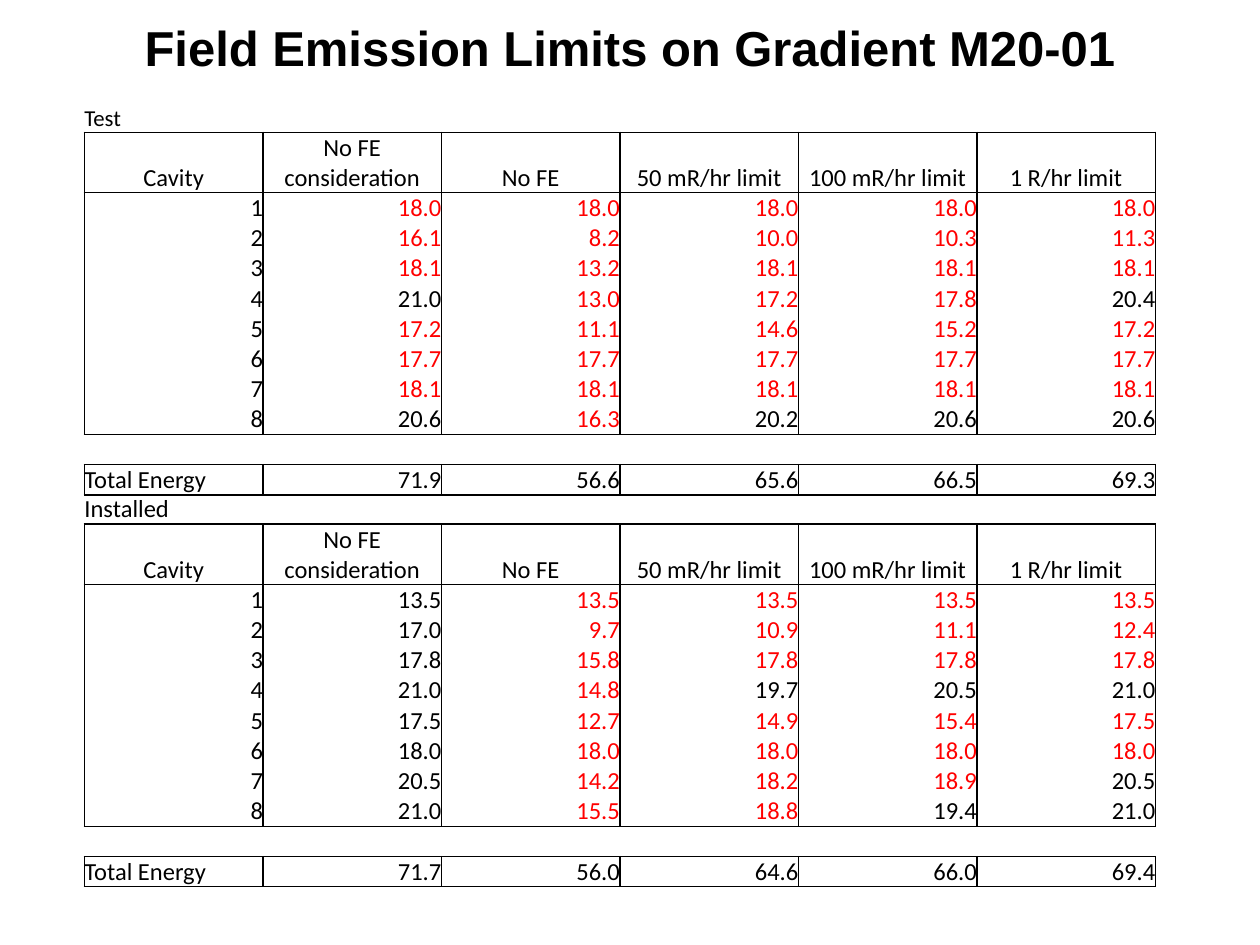
import pptx
import pptx.dml.color
import pptx.enum.text
import pptx.oxml
import pptx.oxml.ns
import pptx.util

# Content: a trailing * marks a limited gradient, shown in red
TITLE = "Field Emission Limits on Gradient M20-01"
HEADINGS = ["Cavity", "No FE consideration", "No FE",
            "50 mR/hr limit", "100 mR/hr limit", "1 R/hr limit"]
TABLES = [
    {
        "label": "Test", "label_size": 13, "top": 0.83, "label_height": 0.22,
        "closing_row": True,
        "cavities": [
            "1 18.0* 18.0* 18.0* 18.0* 18.0*",
            "2 16.1* 8.2* 10.0* 10.3* 11.3*",
            "3 18.1* 13.2* 18.1* 18.1* 18.1*",
            "4 21.0 13.0* 17.2* 17.8* 20.4",
            "5 17.2* 11.1* 14.6* 15.2* 17.2*",
            "6 17.7* 17.7* 17.7* 17.7* 17.7*",
            "7 18.1* 18.1* 18.1* 18.1* 18.1*",
            "8 20.6 16.3* 20.2 20.6 20.6",
        ],
        "totals": "71.9 56.6 65.6 66.5 69.3",
    },
    {
        "label": "Installed", "label_size": 14, "top": 3.92, "label_height": 0.24,
        "closing_row": False,
        "cavities": [
            "1 13.5 13.5* 13.5* 13.5* 13.5*",
            "2 17.0 9.7* 10.9* 11.1* 12.4*",
            "3 17.8 15.8* 17.8* 17.8* 17.8*",
            "4 21.0 14.8* 19.7 20.5 21.0",
            "5 17.5 12.7* 14.9* 15.4* 17.5*",
            "6 18.0 18.0* 18.0* 18.0* 18.0*",
            "7 20.5 14.2* 18.2* 18.9* 20.5",
            "8 21.0 15.5* 18.8* 19.4 21.0",
        ],
        "totals": "71.7 56.0 64.6 66.0 69.4",
    },
]

THEME = {
    "text": "000000", "limited": "FF0000", "border": "000000",
    "title_font": "Arial", "title_size": 28,
    "table_font": "Calibri", "table_size": 14, "border_width": 1,
}
SLIDE_WIDTH, SLIDE_HEIGHT = 10, 7.5
TABLE_LEFT, TABLE_WIDTH, ROW_HEIGHT = 0.67, 8.5, 0.24
PLAIN_TABLE_STYLE = "{2D5ABB26-0587-4C30-8999-92F81FD0307C}"

inches = pptx.util.Inches
ALIGN = pptx.enum.text.PP_ALIGN
MIDDLE = pptx.enum.text.MSO_ANCHOR.MIDDLE
BOTTOM = pptx.enum.text.MSO_ANCHOR.BOTTOM


def style_font(font, name, size, color, bold=False):
    font.name, font.size, font.bold = name, pptx.util.Pt(size), bold
    font.color.rgb = pptx.dml.color.RGBColor.from_string(color)


def add_borders(cell, sides):
    """Draw the named sides and switch the other ones off."""
    properties = cell._tc.get_or_add_tcPr()
    width = pptx.util.Pt(THEME["border_width"])
    solid = f'<a:solidFill><a:srgbClr val="{THEME["border"]}"/></a:solidFill>'
    for side in "LRTB":
        paint = solid if side in sides else "<a:noFill/>"
        properties.append(pptx.oxml.parse_xml(
            f'<a:ln{side} {pptx.oxml.ns.nsdecls("a")} w="{width}">'
            f'{paint}</a:ln{side}>'))


def fill_cell(cell, text, alignment, sides, size):
    cell.margin_left = cell.margin_right = cell.margin_top = cell.margin_bottom = 0
    cell.vertical_anchor = BOTTOM
    add_borders(cell, sides)
    cell.fill.background()
    paragraph = cell.text_frame.paragraphs[0]
    if not text:
        # Keep empty cells as low as the ones with text
        paragraph._p.append(pptx.oxml.parse_xml(
            f'<a:endParaRPr {pptx.oxml.ns.nsdecls("a")} sz="{size * 100}">'
            f'<a:latin typeface="{THEME["table_font"]}"/></a:endParaRPr>'))
        return
    paragraph.text = text.rstrip("*")
    paragraph.alignment = alignment
    color = THEME["limited" if text.endswith("*") else "text"]
    style_font(paragraph.runs[0].font, THEME["table_font"], size, color)


def table_rows(data):
    """Each row: texts, alignment, border sides, type size, height."""
    size, empty = THEME["table_size"], [""] * len(HEADINGS)
    rows = [([data["label"]] + empty[1:], ALIGN.LEFT, "B",
             data["label_size"], data["label_height"]),
            (HEADINGS, ALIGN.CENTER, "LRTB", size, 2 * ROW_HEIGHT)]
    last = len(data["cavities"]) - 1
    for index, line in enumerate(data["cavities"]):
        sides = "LR" + ("T" if index == 0 else "") + ("B" if index == last else "")
        rows.append((line.split(), ALIGN.RIGHT, sides, size, ROW_HEIGHT))
    rows.append((empty, ALIGN.LEFT, "TB", size, ROW_HEIGHT))
    rows.append((["Total Energy"] + data["totals"].split(), ALIGN.RIGHT,
                 "LRTB", size, ROW_HEIGHT))
    if data["closing_row"]:
        rows.append((empty, ALIGN.LEFT, "T", size, ROW_HEIGHT))
    return rows


def add_gradient_table(slide, data):
    rows = table_rows(data)
    table = slide.shapes.add_table(
        len(rows), len(HEADINGS), inches(TABLE_LEFT), inches(data["top"]),
        inches(TABLE_WIDTH), inches(sum(row[-1] for row in rows))).table
    table.first_row = table.horz_banding = False
    table._tbl.tblPr.find(pptx.oxml.ns.qn("a:tableStyleId")).text = PLAIN_TABLE_STYLE
    for column in table.columns:
        column.width = inches(TABLE_WIDTH / len(HEADINGS))
    for row, (texts, alignment, sides, size, height) in zip(table.rows, rows):
        row.height = inches(height)
        for cell, text in zip(row.cells, texts):
            cell_alignment = ALIGN.LEFT if text == "Total Energy" else alignment
            fill_cell(cell, text, cell_alignment, sides, size)


def add_title(slide):
    box = slide.shapes.add_textbox(
        inches(0.075 * SLIDE_WIDTH), 0,
        inches(0.85 * SLIDE_WIDTH), inches(0.1 * SLIDE_HEIGHT))
    frame = box.text_frame
    frame.word_wrap, frame.vertical_anchor = True, MIDDLE
    frame.text = TITLE
    paragraph = frame.paragraphs[0]
    paragraph.alignment = ALIGN.CENTER
    style_font(paragraph.runs[0].font, THEME["title_font"],
               THEME["title_size"], THEME["text"], bold=True)


def main():
    presentation = pptx.Presentation()
    presentation.slide_width = inches(SLIDE_WIDTH)
    presentation.slide_height = inches(SLIDE_HEIGHT)
    slide = presentation.slides.add_slide(presentation.slide_layouts[6])
    add_title(slide)
    for data in TABLES:
        add_gradient_table(slide, data)
    presentation.save("out.pptx")


if __name__ == "__main__":
    main()
